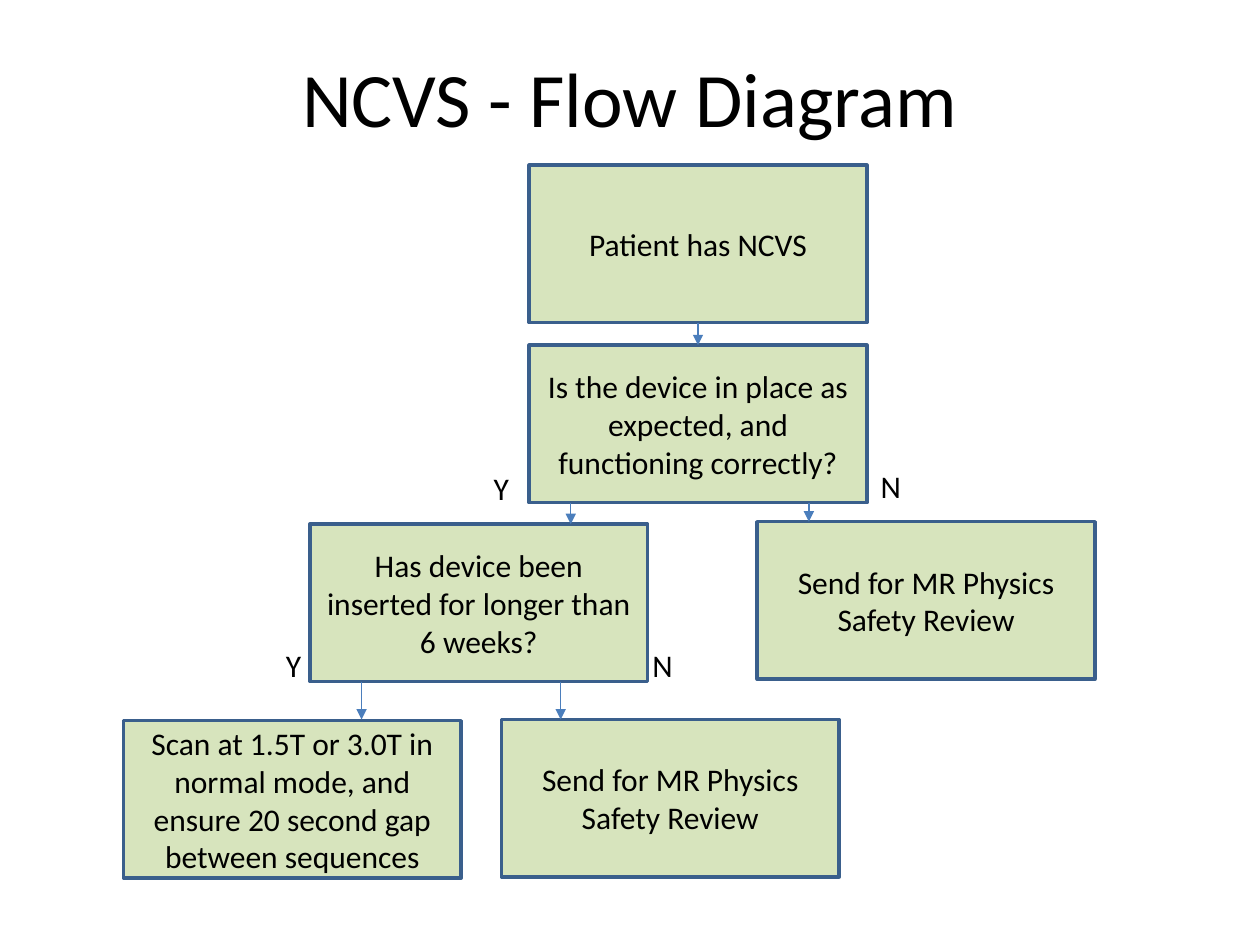
from pptx import Presentation
from pptx.dml.color import RGBColor
from pptx.enum.shapes import MSO_CONNECTOR as Conn, MSO_SHAPE as Form
from pptx.enum.text import MSO_ANCHOR as Anchor, MSO_AUTO_SIZE as Fit, PP_ALIGN as Align
from pptx.oxml.ns import qn
from pptx.util import Pt
from lxml.etree import SubElement

PX = 9144


def px(*nums):
    return [n * PX for n in nums]


def color(code):
    return RGBColor.from_string(code)


class Chart:
    font = "Calibri"
    ink = "000000"
    fill = "D7E4BD"
    edge = "3A5F8C"
    wire = "4B7EBC"
    wide, high = 268, 125

    def __init__(self, slide):
        self.slide = slide
        self.shapes = slide.shapes

    def words(self, frame, text, size=18, align=Align.CENTER):
        frame.text = text
        para = frame.paragraphs[0]
        para.alignment = align
        para.font.name = self.font
        para.font.size = Pt(size)
        para.font.color.rgb = color(self.ink)

    def title(self, text, x, y, w, h):
        head = self.shapes.title
        head.left, head.top, head.width, head.height = px(x, y, w, h)
        head.text_frame.vertical_anchor = Anchor.MIDDLE
        self.words(head.text_frame, text, 44)

    def box(self, text, x, y):
        rect = self.shapes.add_shape(Form.RECTANGLE, *px(x, y, self.wide, self.high))
        rect.shadow.inherit = False
        rect.fill.solid()
        rect.fill.fore_color.rgb = color(self.fill)
        rect.line.color.rgb = color(self.edge)
        rect.line.width = Pt(2)
        rect.text_frame.word_wrap = True
        rect.text_frame.vertical_anchor = Anchor.MIDDLE
        self.words(rect.text_frame, text)
        return rect

    def arrow(self, x, top, end):
        link = self.shapes.add_connector(Conn.STRAIGHT, *px(x, top, x, end))
        link.line.color.rgb = color(self.wire)
        link.line.width = Pt(0.75)
        props = link._element.spPr
        SubElement(props.find(qn("a:ln")), qn("a:tailEnd"), type="triangle")
        SubElement(props, qn("a:effectLst"))
        return link

    def label(self, text, x, y, w):
        note = self.shapes.add_textbox(*px(x, y, w, 40))
        note.text_frame.word_wrap = False
        note.text_frame.auto_size = Fit.SHAPE_TO_FIT_TEXT
        self.words(note.text_frame, text, align=Align.LEFT)


def main():
    deck = Presentation()
    deck.slide_width, deck.slide_height = px(1000, 750)
    flow = Chart(deck.slides.add_slide(deck.slide_layouts[5]))
    flow.title("NCVS - Flow Diagram", 50, 14, 900, 125)

    review = "Send for MR Physics Safety Review"
    start = flow.box("Patient has NCVS", 420, 131)
    check = flow.box("Is the device in place as expected, and functioning correctly?", 420, 274)
    flow.box(review, 601, 414)
    flow.box("Has device been inserted for longer than 6 weeks?", 246, 416)
    flow.box(review, 398, 571)
    flow.box("Scan at 1.5T or 3.0T in normal mode, and ensure 20 second gap between sequences", 98, 572)

    link = flow.arrow(554, 256, 274)
    link.begin_connect(start, 2)
    link.end_connect(check, 0)
    for x, top, end in [(453, 399, 416), (642, 399, 414), (287, 541, 571), (445, 541, 571)]:
        flow.arrow(x, top, end)

    for x, y in [(382, 367), (217, 508)]:
        flow.label("Y", x, y, 32)
    for x, y in [(508, 508), (689, 366)]:
        flow.label("N", x, y, 36)

    deck.save("out.pptx")


if __name__ == "__main__":
    main()
